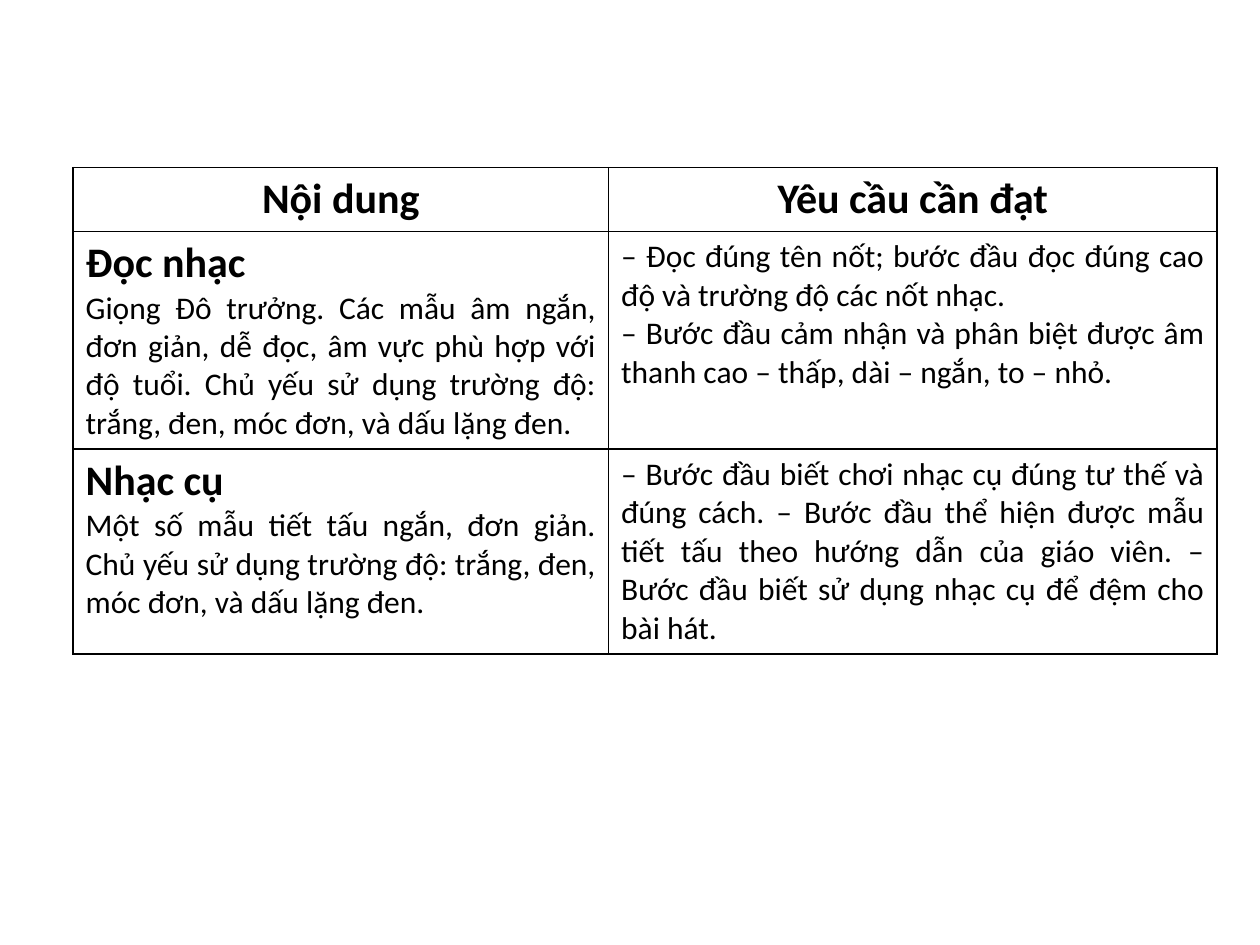
from lxml.etree import SubElement
from pptx import Presentation
from pptx.dml.color import RGBColor
from pptx.enum.text import PP_ALIGN as Align
from pptx.oxml.ns import qn
from pptx.util import Inches, Pt

BLACK = RGBColor(0, 0, 0)
WHITE = RGBColor(255, 255, 255)
FONT = "Calibri"
HEADING_SIZE, BODY_SIZE = 24, 18

HEADERS = ["Nội dung", "Yêu cầu cần đạt"]
TOPICS = [
    {
        "name": "Đọc nhạc ",
        "content": "Giọng Đô trưởng. Các mẫu âm ngắn, đơn giản, dễ đọc, âm vực phù hợp "
                   "với độ tuổi. Chủ yếu sử dụng trường độ: trắng, đen, móc đơn, "
                   "và dấu lặng đen.",
        "requirements": [
            "– Đọc đúng tên nốt; bước đầu đọc đúng cao độ và trường độ các nốt nhạc. ",
            "– Bước đầu cảm nhận và phân biệt được âm thanh cao – thấp, dài – ngắn, "
            "to – nhỏ.",
        ],
    },
    {
        "name": "Nhạc cụ ",
        "content": "Một số mẫu tiết tấu ngắn, đơn giản. Chủ yếu sử dụng trường độ: "
                   "trắng, đen, móc đơn, và dấu lặng đen.",
        "requirements": [
            "– Bước đầu biết chơi nhạc cụ đúng tư thế và đúng cách. "
            "– Bước đầu thể hiện được mẫu tiết tấu theo hướng dẫn của giáo viên. "
            "– Bước đầu biết sử dụng nhạc cụ để đệm cho bài hát.",
        ],
    },
]

LEFT, TOP = 0.58, 1.33
COLUMN_WIDTHS = [4.25, 4.83]
ROW_HEIGHT = 0.41


def write_paragraph(paragraph, text, size=BODY_SIZE, bold=False, align=Align.JUSTIFY):
    paragraph.alignment = align
    run = paragraph.add_run()
    run.text = text
    run.font.name = FONT
    run.font.size = Pt(size)
    run.font.bold = bold
    run.font.color.rgb = BLACK


def style_cell(cell):
    properties = cell._tc.get_or_add_tcPr()
    for side in ("a:lnL", "a:lnR", "a:lnT", "a:lnB"):
        line = SubElement(properties, qn(side), w=str(Pt(1)))
        fill = SubElement(line, qn("a:solidFill"))
        SubElement(fill, qn("a:srgbClr"), val=str(BLACK))
    cell.fill.solid()
    cell.fill.fore_color.rgb = WHITE


def fill_cell(cell, entries):
    style_cell(cell)
    frame = cell.text_frame
    for index, (text, text_format) in enumerate(entries):
        paragraph = frame.add_paragraph() if index else frame.paragraphs[0]
        write_paragraph(paragraph, text, **text_format)


def build_rows():
    heading = {"size": HEADING_SIZE, "bold": True}
    rows = [[[(text, {**heading, "align": Align.CENTER})] for text in HEADERS]]
    for topic in TOPICS:
        rows.append([
            [(topic["name"], heading), (topic["content"], {})],
            [(text, {}) for text in topic["requirements"]],
        ])
    return rows


def main():
    presentation = Presentation()
    presentation.slide_width = Inches(10)
    presentation.slide_height = Inches(7.5)
    slide = presentation.slides.add_slide(presentation.slide_layouts[6])

    rows = build_rows()
    table = slide.shapes.add_table(
        len(rows), len(COLUMN_WIDTHS), Inches(LEFT), Inches(TOP),
        Inches(sum(COLUMN_WIDTHS)), Inches(ROW_HEIGHT * len(rows)),
    ).table
    for column, width in zip(table.columns, COLUMN_WIDTHS):
        column.width = Inches(width)
    for row, contents in zip(table.rows, rows):
        row.height = Inches(ROW_HEIGHT)
        for cell, entries in zip(row.cells, contents):
            fill_cell(cell, entries)

    presentation.save("out.pptx")


if __name__ == "__main__":
    main()
